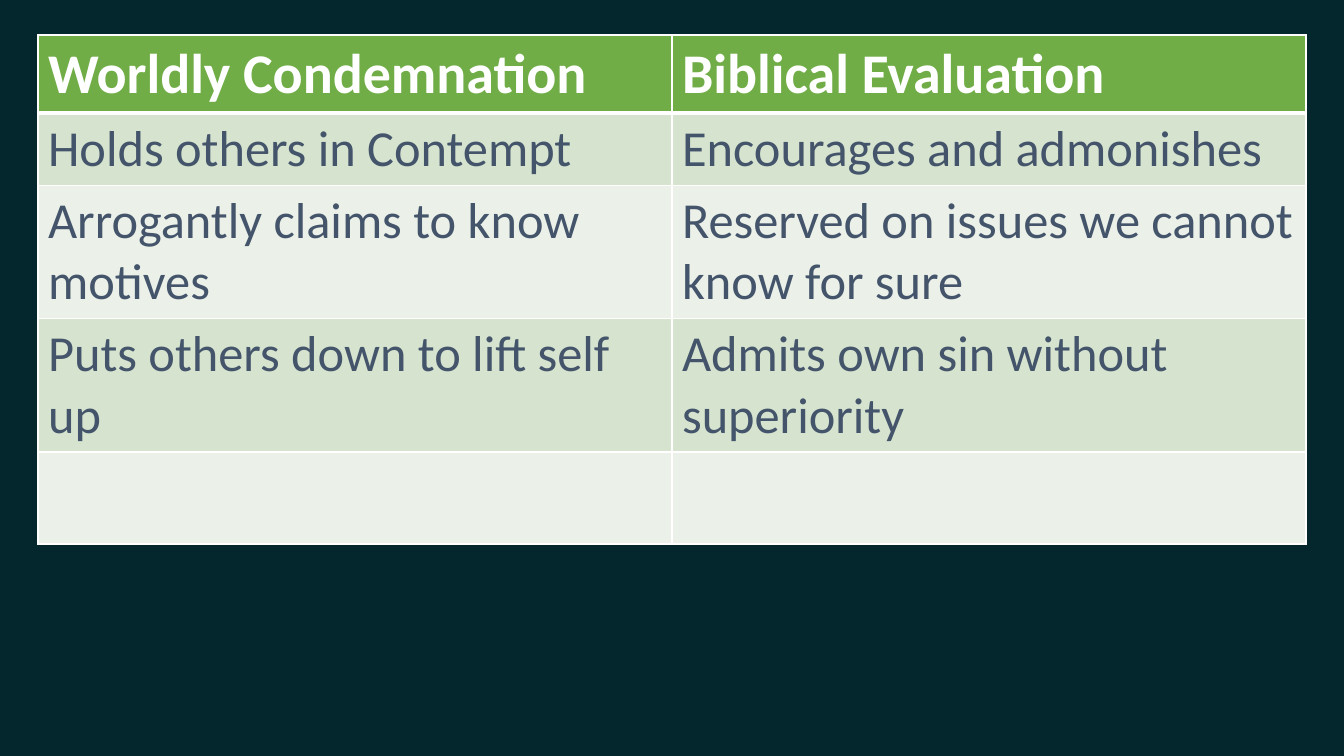
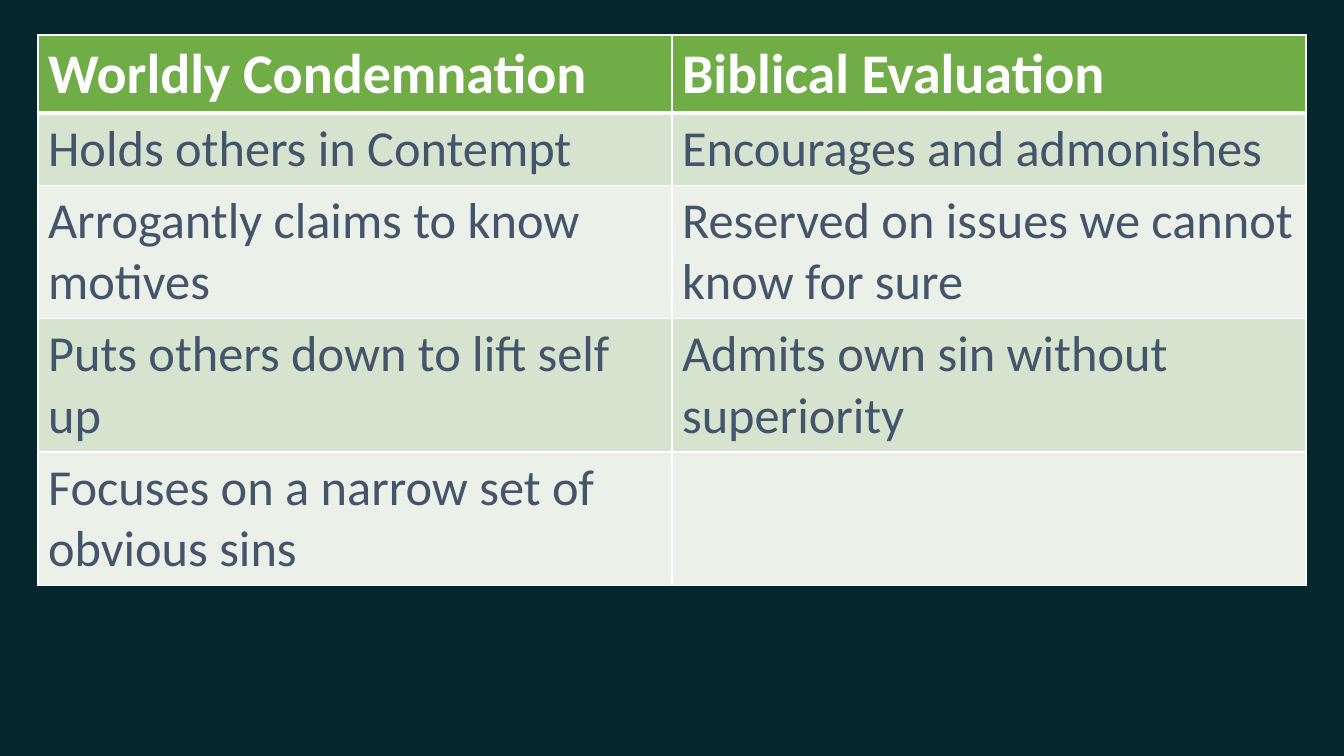
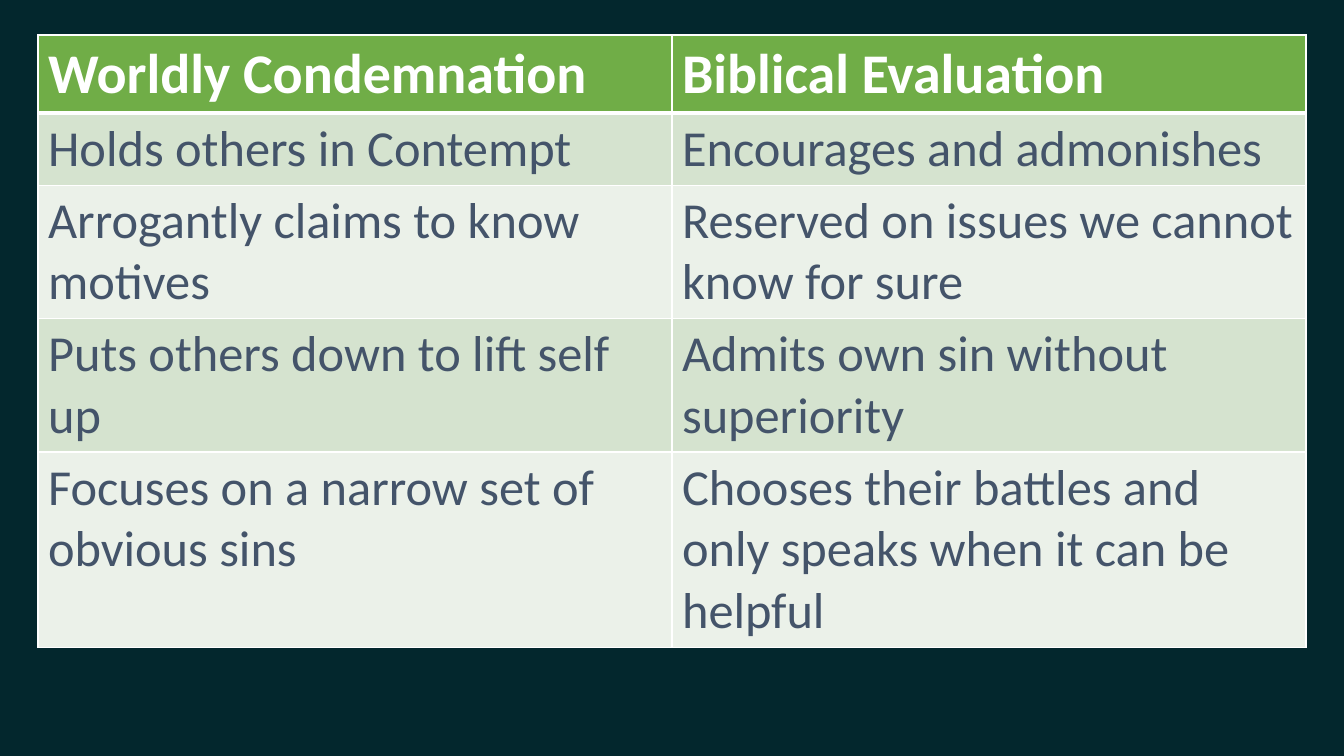
from dataclasses import dataclass

from lxml import etree
from pptx import Presentation
from pptx import util as u
from pptx.dml.color import RGBColor
from pptx.oxml import ns

COLORS = {
    "page": "03272D",
    "header": "70AD47",
    "odd": "D5E3CF",
    "even": "EBF1E9",
    "line": "FFFFFF",
    "heading": "FFFFFF",
    "body": "44546A",
}
FONT = "Calibri"
PAGE_WIDTH, PAGE_HEIGHT = 1344, 756
LEFT, TOP, COLUMN_WIDTH = 38, 35, 634
ROW_HEIGHTS = (68, 68, 92, 92, 92)
THIN, THICK = 1, 3

SHARED_ROWS = (
    ("Worldly Condemnation", "Biblical Evaluation"),
    ("Holds others in Contempt", "Encourages and admonishes"),
    ("Arrogantly claims to know motives", "Reserved on issues we cannot know for sure"),
    ("Puts others down to lift self up", "Admits own sin without superiority"),
)
NARROW_FOCUS = "Focuses on a narrow set of obvious sins"
CHOSEN_BATTLES = "Chooses their battles and only speaks when it can be helpful"


@dataclass(frozen=True)
class Comparison:
    height: int
    last_row: tuple[str, str]


@dataclass(frozen=True)
class RowStyle:
    fill: str
    ink: str
    size: int
    bold: bool
    top: int = THIN
    bottom: int = THIN


COMPARISONS = (
    Comparison(562, ("", "")),
    Comparison(602, (NARROW_FOCUS, "")),
    Comparison(662, (NARROW_FOCUS, CHOSEN_BATTLES)),
)


def px(length: int) -> u.Emu:
    return u.Emu(round(length * 914400 / 100.8))


def color(name: str) -> RGBColor:
    return RGBColor.from_string(COLORS[name])


def row_style(index: int) -> RowStyle:
    if index == 0:
        return RowStyle("header", "heading", 40, True, bottom=THICK)
    band = "odd" if index % 2 else "even"
    return RowStyle(band, "body", 36, False, top=THICK if index == 1 else THIN)


def add_borders(cell, style: RowStyle) -> None:
    properties = cell._tc.get_or_add_tcPr()
    widths = {"lnL": THIN, "lnR": THIN, "lnT": style.top, "lnB": style.bottom}
    for side, width in widths.items():
        line = etree.SubElement(properties, ns.qn(f"a:{side}"), w=str(u.Pt(width)))
        fill = etree.SubElement(line, ns.qn("a:solidFill"))
        etree.SubElement(fill, ns.qn("a:srgbClr"), val=COLORS["line"])


def fill_cell(cell, words: str, style: RowStyle) -> None:
    add_borders(cell, style)
    cell.fill.solid()
    cell.fill.fore_color.rgb = color(style.fill)
    if not words:
        return
    span = cell.text_frame.paragraphs[0].add_run()
    span.text = words
    span.font.name = FONT
    span.font.size = u.Pt(style.size)
    span.font.bold = style.bold
    span.font.color.rgb = color(style.ink)


def add_comparison(page, comparison: Comparison) -> None:
    rows = (*SHARED_ROWS, comparison.last_row)
    columns = len(rows[0])
    box = page.shapes.add_table(
        len(rows), columns, px(LEFT), px(TOP),
        px(columns * COLUMN_WIDTH), px(sum(ROW_HEIGHTS)),
    )
    table = box.table
    for column in table.columns:
        column.width = px(COLUMN_WIDTH)
    for index, (row, height, entries) in enumerate(zip(table.rows, ROW_HEIGHTS, rows)):
        row.height = px(height)
        for cell, words in zip(row.cells, entries):
            fill_cell(cell, words, row_style(index))
    box.height = px(comparison.height)


def main() -> None:
    deck = Presentation()
    deck.slide_width, deck.slide_height = px(PAGE_WIDTH), px(PAGE_HEIGHT)
    background = deck.slide_master.background.fill
    background.solid()
    background.fore_color.rgb = color("page")
    blank = deck.slide_layouts.get_by_name("Blank")
    for comparison in COMPARISONS:
        add_comparison(deck.slides.add_slide(blank), comparison)
    deck.save("out.pptx")


if __name__ == "__main__":
    main()
